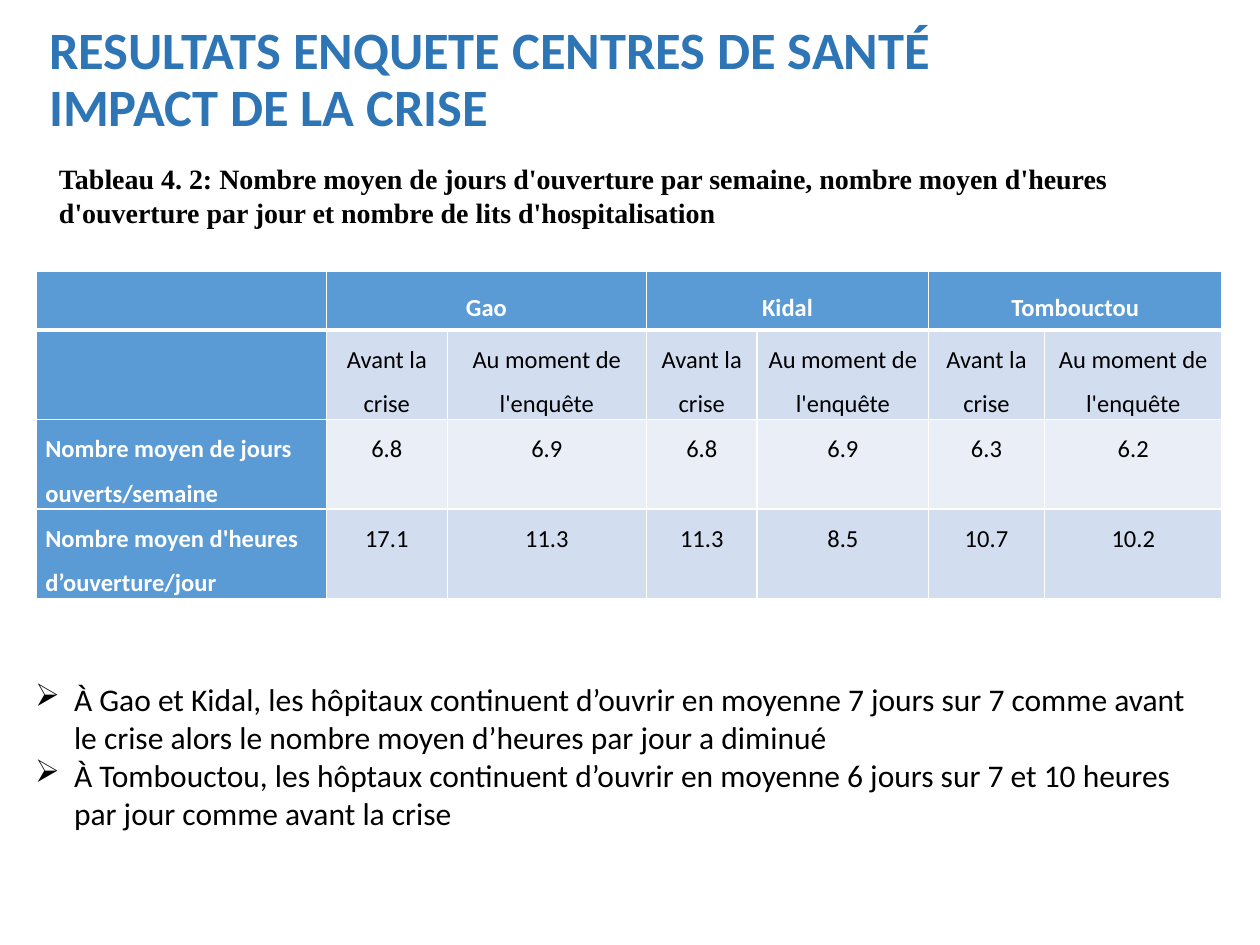
import pptx
import pptx.util
import pptx.oxml
import pptx.oxml.ns
import pptx.dml.color
import pptx.enum.text
from pptx.util import Inches, Pt

RGBColor = pptx.dml.color.RGBColor
ANCHOR = pptx.enum.text.MSO_ANCHOR
ALIGN = pptx.enum.text.PP_ALIGN

TITLE = RGBColor(0x2E, 0x75, 0xB6)
HEAD = RGBColor(0x5B, 0x9B, 0xD5)
BANDS = [RGBColor(0xD2, 0xDE, 0xEF), RGBColor(0xEA, 0xEF, 0xF7)]
WHITE = RGBColor(0xFF, 0xFF, 0xFF)
BLACK = RGBColor(0, 0, 0)

COLS = [2.3, 0.96, 1.58, 0.88, 1.36, 0.92, 1.41]
ROWS = [0.47, 0.49, 0.6, 0.6]
TOWNS = ["Gao", "Kidal", "Tombouctou"]
BODY = [
    [""] + ["Avant la crise", "Au moment de l'enquête"] * len(TOWNS),
    ["Nombre moyen de jours ouverts/semaine",
     "6.8", "6.9", "6.8", "6.9", "6.3", "6.2"],
    ["Nombre moyen d'heures d’ouverture/jour",
     "17.1", "11.3", "11.3", "8.5", "10.7", "10.2"],
]
CAPTION = ("Tableau 4. 2: Nombre moyen de jours d'ouverture par semaine, "
           "nombre moyen d'heures d'ouverture par jour et nombre de lits "
           "d'hospitalisation")
POINTS = [
    "À Gao et Kidal, les hôpitaux continuent d’ouvrir en moyenne 7 jours sur 7 "
    "comme avant le crise alors le nombre moyen d’heures par jour a diminué",
    "À Tombouctou, les hôptaux continuent d’ouvrir en moyenne 6 jours sur 7 "
    "et 10 heures par jour comme avant la crise",
]


def set_font(para, size, color, bold=False, name="Calibri"):
    font = para.font
    font.name, font.size, font.bold = name, Pt(size), bold
    font.color.rgb = color


def add_title(slide, text):
    title = slide.shapes.title
    title.left, title.top = Inches(0.29), Inches(0.22)
    title.width, title.height = Inches(9.42), Inches(0.85)
    frame = title.text_frame
    frame.text = text
    frame.word_wrap = True
    frame.auto_size = pptx.enum.text.MSO_AUTO_SIZE.NONE
    frame.vertical_anchor = ANCHOR.MIDDLE
    para = frame.paragraphs[0]
    para.alignment = ALIGN.LEFT
    para.line_spacing = 0.9
    set_font(para, 30, TITLE, True)


def add_box(slide, left, top, width, height, texts):
    box = slide.shapes.add_textbox(
        Inches(left), Inches(top), Inches(width), Inches(height))
    frame = box.text_frame
    frame.word_wrap = True
    frame.text = "\n".join(texts)
    return frame


def add_bullet(para):
    props = para._p.get_or_add_pPr()
    props.set("marL", str(Inches(0.31)))
    props.set("indent", str(-Inches(0.31)))
    props.append(pptx.oxml.parse_xml(
        f'<a:buChar {pptx.oxml.ns.nsdecls("a")} char="➢"/>'))


def set_edges(cell, top, bottom):
    """Draw white cell borders, with top and bottom widths in points."""
    props = cell._tc.get_or_add_tcPr()
    widths = {"lnL": 1, "lnR": 1, "lnT": top, "lnB": bottom}
    for spot, (tag, width) in enumerate(widths.items()):
        props.insert(spot, pptx.oxml.parse_xml(
            f'<a:{tag} {pptx.oxml.ns.nsdecls("a")} w="{Pt(width)}">'
            f'<a:solidFill><a:srgbClr val="{WHITE}"/></a:solidFill></a:{tag}>'))


def fill_cell(cell, text, row, col):
    head = row == 0 or col == 0
    cell.fill.solid()
    cell.fill.fore_color.rgb = HEAD if head else BANDS[(row - 1) % 2]
    set_edges(cell, 3 if row == 1 else 1, 3 if row == 0 else 1)
    cell.margin_left = cell.margin_right = Inches(0.07)
    cell.margin_top = cell.margin_bottom = 0
    cell.vertical_anchor = ANCHOR.MIDDLE if head else ANCHOR.TOP
    if text:
        cell.text = text
        para = cell.text_frame.paragraphs[0]
        para.alignment = ALIGN.CENTER if col else ALIGN.LEFT
        para.line_spacing = 1.5
        para.space_before = Pt(4)
        set_font(para, 14, WHITE if head else BLACK, head)


def add_grid(slide):
    table = slide.shapes.add_table(
        len(ROWS), len(COLS), Inches(0.29), Inches(2.15),
        Inches(sum(COLS)), Inches(sum(ROWS))).table
    for col, width in zip(table.columns, COLS):
        col.width = Inches(width)
    for row, height in zip(table.rows, ROWS):
        row.height = Inches(height)
    top = [""]
    for town in TOWNS:
        table.cell(0, len(top)).merge(table.cell(0, len(top) + 1))
        top += [town, ""]
    for r, texts in enumerate([top] + BODY):
        for c, text in enumerate(texts):
            fill_cell(table.cell(r, c), text, r, c)


def main():
    deck = pptx.Presentation()
    deck.slide_width, deck.slide_height = Inches(10), Inches(7.5)
    slide = deck.slides.add_slide(deck.slide_layouts[5])
    add_title(slide, "RESULTATS ENQUETE CENTRES DE SANTÉ\vIMPACT DE LA CRISE")
    add_grid(slide)
    frame = add_box(slide, 0.37, 1.23, 8.94, 0.64, [CAPTION])
    frame.vertical_anchor = ANCHOR.MIDDLE
    set_font(frame.paragraphs[0], 16, BLACK, True, "Times New Roman")
    for para in add_box(slide, 0.18, 5.35, 9.53, 1.31, POINTS).paragraphs:
        add_bullet(para)
        set_font(para, 18, BLACK)
    deck.save("out.pptx")


if __name__ == "__main__":
    main()
